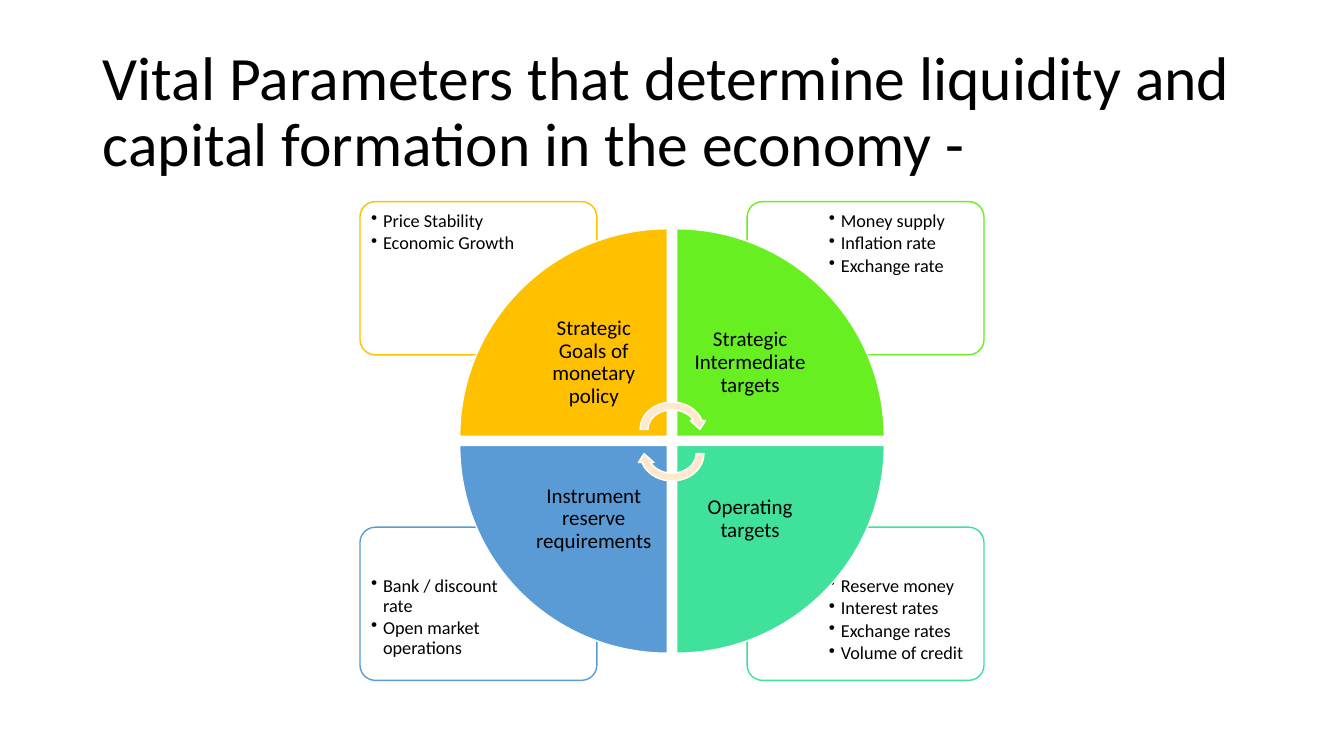
from dataclasses import dataclass

from lxml.etree import SubElement
from pptx import Presentation
from pptx.dml.color import RGBColor
from pptx.enum.shapes import MSO_SHAPE as Shape
from pptx.enum.text import MSO_ANCHOR as Anchor, MSO_AUTO_SIZE as AutoSize, PP_ALIGN as Align
from pptx.oxml.ns import qn
from pptx.util import Inches, Pt


@dataclass(frozen=True)
class Theme:
    """Colours, font and type sizes of the slide."""
    font: str = "Calibri"
    text: str = "000000"
    white: str = "FFFFFF"
    arrow: str = "FFE8CC"
    gold: str = "FFC000"
    green: str = "67EF21"
    teal: str = "3FE19B"
    blue: str = "5B9BD5"
    title_size: int = 44
    label_size: int = 15
    list_size: int = 13


@dataclass(frozen=True)
class Quadrant:
    """One quarter of the cycle with its column, row, rotation and wording."""
    col: int
    row: int
    rotation: int
    color: str
    label: str
    items: tuple


THEME = Theme()
TITLE = "Vital Parameters that determine liquidity and capital formation in the economy -"
QUADRANTS = (
    Quadrant(1, 1, 180, THEME.teal, "Operating targets",
             ("Reserve money", "Interest rates", "Exchange rates", "Volume of credit")),
    Quadrant(0, 1, 270, THEME.blue, "Instrument reserve requirements",
             ("Bank / discount rate", "Open market operations")),
    Quadrant(1, 0, 90, THEME.green, "Strategic Intermediate targets",
             ("Money supply", "Inflation rate", "Exchange rate")),
    Quadrant(0, 0, 0, THEME.gold, "Strategic Goals of monetary policy",
             ("Price Stability", "Economic Growth")),
)
CARD_X, CARD_Y, CARD_W, CARD_H = (3.57, 7.41), (2, 5.23), 2.35, 1.52
LIST_X, LIST_Y, LIST_W, LIST_H = (3.61, 8.15), (2.03, 5.65), 1.58, 1.08
WEDGE_X, WEDGE_Y, WEDGE = (4.56, 6.71), (2.27, 4.42), 2.06
LABEL_X, LABEL_Y, LABEL = (5.16, 6.71), (2.87, 4.42), 1.46
ARROW_X, ARROW_Y, ARROW_W, ARROW_H = 6.31, (3.95, 4.19), 0.71, 0.62


def format_paragraph(p, size, align=Align.LEFT, space_after=0):
    """Apply the theme font, alignment and spacing to a paragraph."""
    p.alignment = align
    p.line_spacing = 0.9
    p.space_before = Pt(0)
    p.space_after = Pt(space_after)
    for r in p.runs:
        r.font.name = THEME.font
        r.font.size = Pt(size)
        r.font.color.rgb = RGBColor.from_string(THEME.text)


def add_bullet(p):
    """Give a paragraph a hanging bullet."""
    p.level = 1
    pPr = p._p.get_or_add_pPr()
    pPr.set("marL", str(Inches(0.12)))
    pPr.set("indent", str(-Inches(0.12)))
    SubElement(pPr, qn("a:buChar"), char="•")


def add_filled_shape(s, kind, box, fill, line, rotation=0):
    """Add a preset shape with a plain fill and a thin outline."""
    sp = s.shapes.add_shape(kind, *map(Inches, box))
    sp.shadow.inherit = False
    sp.fill.solid()
    sp.fill.fore_color.rgb = RGBColor.from_string(fill)
    sp.line.color.rgb = RGBColor.from_string(line)
    sp.line.width = Pt(1)
    sp.rotation = rotation
    return sp


def add_text_box(s, box, text, inset, anchor=Anchor.TOP):
    """Add a wrapping text box with equal insets and return its frame."""
    tf = s.shapes.add_textbox(*map(Inches, box)).text_frame
    tf.word_wrap = True
    tf.vertical_anchor = anchor
    tf.margin_left = tf.margin_right = tf.margin_top = tf.margin_bottom = Inches(inset)
    tf.text = text
    return tf


def add_title(s):
    """Place and format the title placeholder."""
    sp = s.shapes.title
    sp.left, sp.top, sp.width, sp.height = map(Inches, (0.92, 0.4, 11.5, 1.45))
    tf = sp.text_frame
    tf.text = TITLE
    tf.word_wrap = True
    tf.auto_size = AutoSize.NONE
    tf.vertical_anchor = Anchor.MIDDLE
    format_paragraph(tf.paragraphs[0], THEME.title_size)


def add_card(s, q):
    """Add the outlined card and bullet list of a quadrant."""
    box = (CARD_X[q.col], CARD_Y[q.row], CARD_W, CARD_H)
    sp = add_filled_shape(s, Shape.ROUNDED_RECTANGLE, box, THEME.white, q.color)
    sp.adjustments[0] = 0.1
    color = sp._element.spPr.find(qn("a:solidFill"))[0]
    SubElement(color, qn("a:alpha"), val="90000")
    box = (LIST_X[q.col], LIST_Y[q.row], LIST_W, LIST_H)
    tf = add_text_box(s, box, "\n".join(q.items), 0.07)
    for p in tf.paragraphs:
        format_paragraph(p, THEME.list_size, space_after=2)
        add_bullet(p)


def add_wedge(s, q):
    """Add the pie wedge and centred label of a quadrant."""
    box = (WEDGE_X[q.col], WEDGE_Y[q.row], WEDGE, WEDGE)
    add_filled_shape(s, Shape.PIE_WEDGE, box, q.color, THEME.white, q.rotation)
    box = (LABEL_X[q.col], LABEL_Y[q.row], LABEL, LABEL)
    tf = add_text_box(s, box, q.label, 0.12, Anchor.MIDDLE)
    format_paragraph(tf.paragraphs[0], THEME.label_size, Align.CENTER, 5)


def add_cycle_arrows(s):
    """Add the two circular arrows at the centre."""
    for top, rotation in zip(ARROW_Y, (0, 180)):
        box = (ARROW_X, top, ARROW_W, ARROW_H)
        add_filled_shape(s, Shape.CIRCULAR_ARROW, box, THEME.arrow, THEME.white, rotation)


def main():
    """Build and save the slide."""
    prs = Presentation()
    prs.slide_width, prs.slide_height = Inches(13.33), Inches(7.5)
    s = prs.slides.add_slide(prs.slide_layouts[5])
    add_title(s)
    for q in QUADRANTS:
        add_card(s, q)
    for q in reversed(QUADRANTS):
        add_wedge(s, q)
    add_cycle_arrows(s)
    prs.save("out.pptx")


if __name__ == "__main__":
    main()
